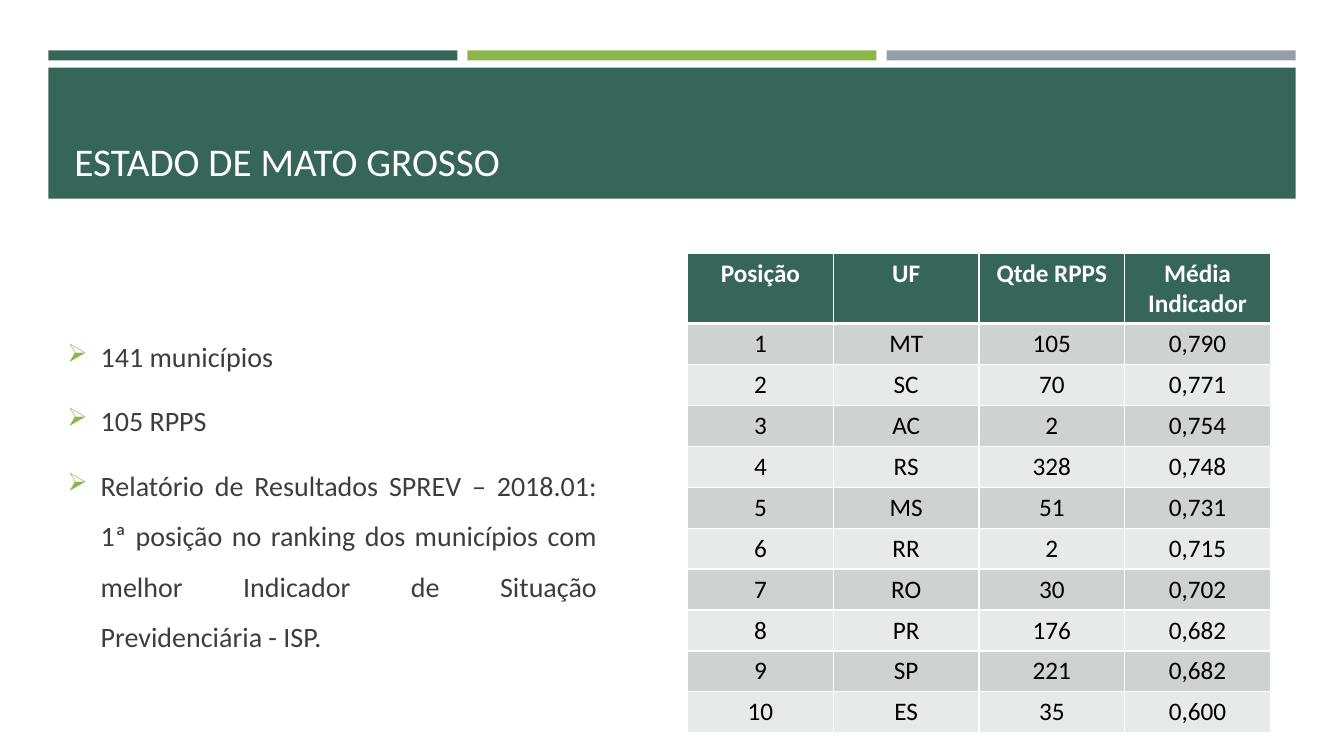
from lxml.etree import SubElement
from pptx import Presentation
from pptx.dml.color import RGBColor
from pptx.enum.shapes import MSO_SHAPE
from pptx.enum.text import MSO_ANCHOR, PP_ALIGN
from pptx.oxml import parse_xml
from pptx.oxml.ns import nsdecls, qn
from pptx.util import Inches, Pt

COLORS = {
    "green": "366658",
    "lime": "8CB64A",
    "gray": "969FA7",
    "ink": "3D3D3D",
    "black": "000000",
    "white": "FFFFFF",
    "odd": "CED3D1",
    "even": "E8EAEA",
}
POINTS = [
    "141 municípios",
    "105 RPPS",
    "Relatório de Resultados SPREV – 2018.01: 1ª posição no ranking dos "
    "municípios com melhor Indicador de Situação Previdenciária - ISP.",
]
HEADS = ["Posição", "UF", "Qtde RPPS", "Média Indicador"]
STATES = [
    ("MT", "105", "0,790"),
    ("SC", "70", "0,771"),
    ("AC", "2", "0,754"),
    ("RS", "328", "0,748"),
    ("MS", "51", "0,731"),
    ("RR", "2", "0,715"),
    ("RO", "30", "0,702"),
    ("PR", "176", "0,682"),
    ("SP", "221", "0,682"),
    ("ES", "35", "0,600"),
]


def color(name):
    return RGBColor.from_string(COLORS[name])


def write(para, text, size=18, tint="black", bold=False, align=PP_ALIGN.LEFT):
    para.alignment = align
    run = para.add_run()
    run.text = text
    run.font.name = "Calibri"
    run.font.size = Pt(size)
    run.font.bold = bold
    run.font.color.rgb = color(tint)


def add_bar(slide, box, tint):
    bar = slide.shapes.add_shape(MSO_SHAPE.RECTANGLE, *map(Inches, box))
    bar.shadow.inherit = False
    bar.fill.solid()
    bar.fill.fore_color.rgb = color(tint)
    bar.line.fill.background()


def add_frame(slide, box, anchor):
    frame = slide.shapes.add_textbox(*map(Inches, box)).text_frame
    frame.word_wrap = True
    frame.vertical_anchor = anchor
    return frame


def add_header(slide, box):
    left, top, width, height = box
    gap = 0.1
    step = (width + gap) / 3
    for i, tint in enumerate(["green", "lime", "gray"]):
        add_bar(slide, (left + i * step, top, step - gap, 0.1), tint)
    add_bar(slide, (left, top + 0.17, width, height - 0.17), "green")
    title = (left + 0.16, top + 0.27, width - 0.3, height - 0.36)
    frame = add_frame(slide, title, MSO_ANCHOR.BOTTOM)
    write(frame.paragraphs[0], "ESTADO DE MATO GROSSO", size=28, tint="white")


def add_bullet(para):
    props = para._p.get_or_add_pPr()
    props.set("marL", str(Inches(0.33)))
    props.set("indent", str(-Inches(0.33)))
    tint = SubElement(props, qn("a:buClr"))
    SubElement(tint, qn("a:srgbClr"), val=COLORS["lime"])
    SubElement(props, qn("a:buSzPct"), val="92000")
    SubElement(props, qn("a:buChar"), char="➢")


def add_points(slide, box):
    frame = add_frame(slide, box, MSO_ANCHOR.MIDDLE)
    for i, text in enumerate(POINTS):
        para = frame.add_paragraph() if i else frame.paragraphs[0]
        para.line_spacing = 1.5
        para.space_before = Pt(4)
        para.space_after = Pt(6)
        add_bullet(para)
        write(para, text, size=20, tint="ink", align=PP_ALIGN.JUSTIFY)


def add_borders(cell, row):
    widths = {"L": 1, "R": 1, "T": 3 if row == 1 else 1, "B": 1 if row else 3}
    props = cell._tc.get_or_add_tcPr()
    for i, (side, width) in enumerate(widths.items()):
        props.insert(i, parse_xml(
            f'<a:ln{side} {nsdecls("a")} w="{Pt(width)}"><a:solidFill>'
            f'<a:srgbClr val="{COLORS["white"]}"/></a:solidFill></a:ln{side}>'
        ))


def add_ranking(slide, box):
    rows = [HEADS] + [(str(i), *state) for i, state in enumerate(STATES, 1)]
    shape = slide.shapes.add_table(len(rows), len(HEADS), *map(Inches, box))
    table = shape.table
    head = 0.7
    for col in table.columns:
        col.width = Inches(box[2] / len(HEADS))
    for r, row in enumerate(rows):
        table.rows[r].height = Inches((box[3] - head) / len(STATES) if r else head)
        fill = ("odd" if r % 2 else "even") if r else "green"
        for c, text in enumerate(row):
            cell = table.cell(r, c)
            cell.fill.solid()
            cell.fill.fore_color.rgb = color(fill)
            add_borders(cell, r)
            write(cell.text_frame.paragraphs[0], text, bold=r == 0,
                  tint="black" if r else "white", align=PP_ALIGN.CENTER)


def main():
    deck = Presentation()
    deck.slide_width = Inches(13.33)
    deck.slide_height = Inches(7.5)
    slide = deck.slides.add_slide(deck.slide_layouts[6])
    add_header(slide, (0.48, 0.5, 12.37, 1.47))
    add_points(slide, (0.57, 2.77, 5.45, 4.14))
    add_ranking(slide, (6.82, 2.51, 5.78, 4.76))
    deck.save("out.pptx")


if __name__ == "__main__":
    main()
